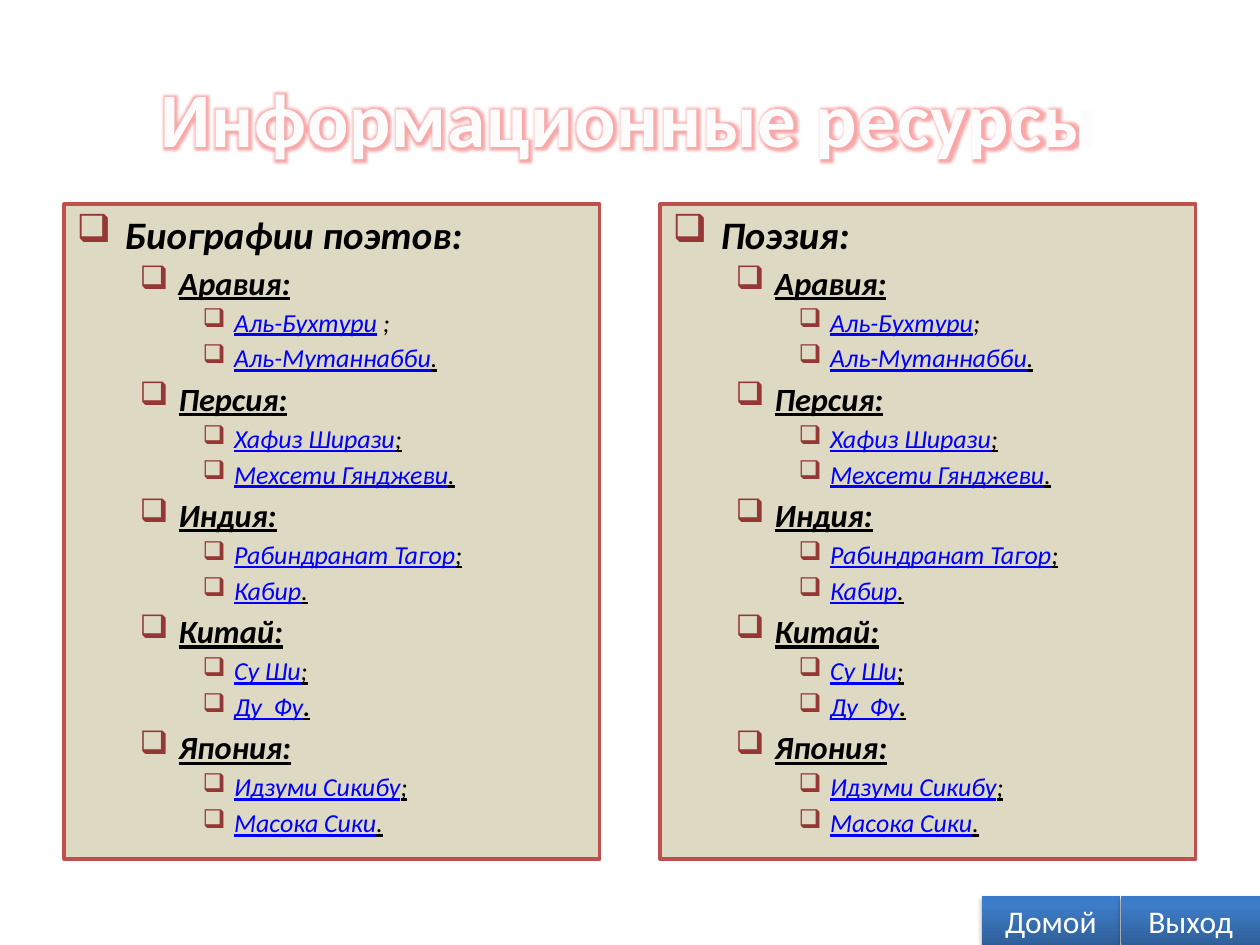
from lxml.etree import SubElement
from pptx import Presentation
from pptx.dml.color import RGBColor
from pptx.enum.shapes import MSO_SHAPE
from pptx.enum.text import MSO_ANCHOR, PP_ALIGN
from pptx.oxml import parse_xml
from pptx.oxml.ns import nsdecls, qn
from pptx.util import Inches, Pt

BLACK = RGBColor(0x00, 0x00, 0x00)
WHITE = RGBColor(0xFF, 0xFF, 0xFF)
TITLE_WHITE = RGBColor(0xFC, 0xFC, 0xFD)
LINK_BLUE = RGBColor(0x00, 0x00, 0xFF)
PANEL_FILL = RGBColor(0xDD, 0xD9, 0xC3)
PANEL_LINE = RGBColor(0xC0, 0x50, 0x4D)
BULLET_RED = RGBColor(0x95, 0x37, 0x35)

# Outline levels: left margin, hanging indent (inches), text size (points)
LEVELS = [(0.38, 0.38, 22.2), (0.81, 0.31, 18.5), (1.25, 0.25, 14.8)]

COUNTRIES = [
    ("Аравия:", ["Аль-Бухтури", "Аль-Мутаннабби"]),
    ("Персия:", ["Хафиз Ширази", "Мехсети Гянджеви"]),
    ("Индия:", ["Рабиндранат Тагор", "Кабир"]),
    ("Китай:", ["Су Ши", "Ду  Фу"]),
    ("Япония:", ["Идзуми Сикибу", "Масока Сики"]),
]


def add_text(paragraph, text, size, color, bold=False, italic=False, underline=False):
    run = paragraph.add_run()
    run.text = text
    font = run.font
    font.name = "Calibri"
    font.size = Pt(size)
    font.color.rgb = color
    font.bold = bold
    font.italic = italic
    font.underline = underline
    return run


def add_bullet_paragraph(text_frame, level):
    """Start a bulleted paragraph, using the empty first one if it is free."""
    first = text_frame.paragraphs[0]
    paragraph = first if not first.runs else text_frame.add_paragraph()
    left, hanging, size = LEVELS[level]
    paragraph.level = level
    paragraph.alignment = PP_ALIGN.LEFT
    if paragraph is not first:
        paragraph.space_before = Pt(round(size * 0.18, 1))
    properties = paragraph._p.get_or_add_pPr()
    properties.set("marL", str(Inches(left)))
    properties.set("indent", str(-Inches(hanging)))
    bullet_color = SubElement(properties, qn("a:buClr"))
    SubElement(bullet_color, qn("a:srgbClr")).set("val", str(BULLET_RED))
    SubElement(properties, qn("a:buChar")).set("char", "❑")
    return paragraph


presentation = Presentation()
presentation.slide_width = Inches(10)
presentation.slide_height = Inches(7.5)
slide = presentation.slides.add_slide(presentation.slide_layouts[6])

# Title with a red glow
title = slide.shapes.add_textbox(Inches(0.5), Inches(0.3), Inches(9), Inches(1.25))
title.text_frame.word_wrap = True
title.text_frame.vertical_anchor = MSO_ANCHOR.MIDDLE
paragraph = title.text_frame.paragraphs[0]
paragraph.alignment = PP_ALIGN.CENTER
run = add_text(paragraph, "Информационные ресурсы", 44, TITLE_WHITE, bold=True)
run_properties = run._r.get_or_add_rPr()
run_properties.set("spc", "50")
glow = parse_xml(
    f'<a:effectLst {nsdecls("a")}><a:glow rad="76200"><a:srgbClr val="F04040">'
    '<a:alpha val="45000"/></a:srgbClr></a:glow></a:effectLst>'
)
run_properties.find(qn("a:solidFill")).addnext(glow)

# Two panels with the same outline of countries and poets
for left, heading, first_mark in [(0.51, "Биографии поэтов:", " ;"), (5.24, "Поэзия:", ";")]:
    panel = slide.shapes.add_shape(
        MSO_SHAPE.RECTANGLE, Inches(left), Inches(1.62), Inches(4.25), Inches(5.2))
    panel.shadow.inherit = False
    panel.fill.solid()
    panel.fill.fore_color.rgb = PANEL_FILL
    panel.line.color.rgb = PANEL_LINE
    panel.line.width = Pt(2)
    text_frame = panel.text_frame
    text_frame.word_wrap = True
    text_frame.vertical_anchor = MSO_ANCHOR.TOP

    paragraph = add_bullet_paragraph(text_frame, 0)
    add_text(paragraph, heading, LEVELS[0][2], BLACK, bold=True, italic=True)
    for country, poets in COUNTRIES:
        paragraph = add_bullet_paragraph(text_frame, 1)
        add_text(paragraph, country, LEVELS[1][2], BLACK,
                 bold=True, italic=True, underline=True)
        for poet, mark in zip(poets, [";", "."]):
            is_first = poet == "Аль-Бухтури"
            size = LEVELS[2][2]
            paragraph = add_bullet_paragraph(text_frame, 2)
            add_text(paragraph, poet, size, LINK_BLUE, italic=True, underline=True)
            add_text(paragraph, first_mark if is_first else mark, size, BLACK,
                     bold=poet == "Ду  Фу", italic=True, underline=not is_first)

# Navigation buttons
for left, label in [(7.79, "Домой"), (8.9, "Выход")]:
    button = slide.shapes.add_shape(
        MSO_SHAPE.ACTION_BUTTON_CUSTOM, Inches(left), Inches(7.11), Inches(1.1), Inches(0.39))
    button.line.fill.background()
    shape_properties = button._element.spPr
    stops = "".join(
        f'<a:gs pos="{position * 1000}"><a:srgbClr val="{color}"/></a:gs>'
        for position, color in [(0, "2F5F99"), (80, "3D7CC7"), (100, "3A7CCB")])
    gradient = parse_xml(
        f'<a:gradFill {nsdecls("a")} rotWithShape="1"><a:gsLst>{stops}</a:gsLst>'
        '<a:lin ang="16200000" scaled="0"/></a:gradFill>')
    shape_properties.find(qn("a:prstGeom")).addnext(gradient)
    shape_properties.append(parse_xml(
        f'<a:effectLst {nsdecls("a")}><a:outerShdw blurRad="{Pt(3.1)}" dist="{Pt(1.8)}" '
        'dir="5400000" rotWithShape="0"><a:srgbClr val="000000"><a:alpha val="35000"/>'
        '</a:srgbClr></a:outerShdw></a:effectLst>'))
    button.text_frame.vertical_anchor = MSO_ANCHOR.MIDDLE
    paragraph = button.text_frame.paragraphs[0]
    paragraph.alignment = PP_ALIGN.CENTER
    add_text(paragraph, label, 18, WHITE)

presentation.save("out.pptx")
